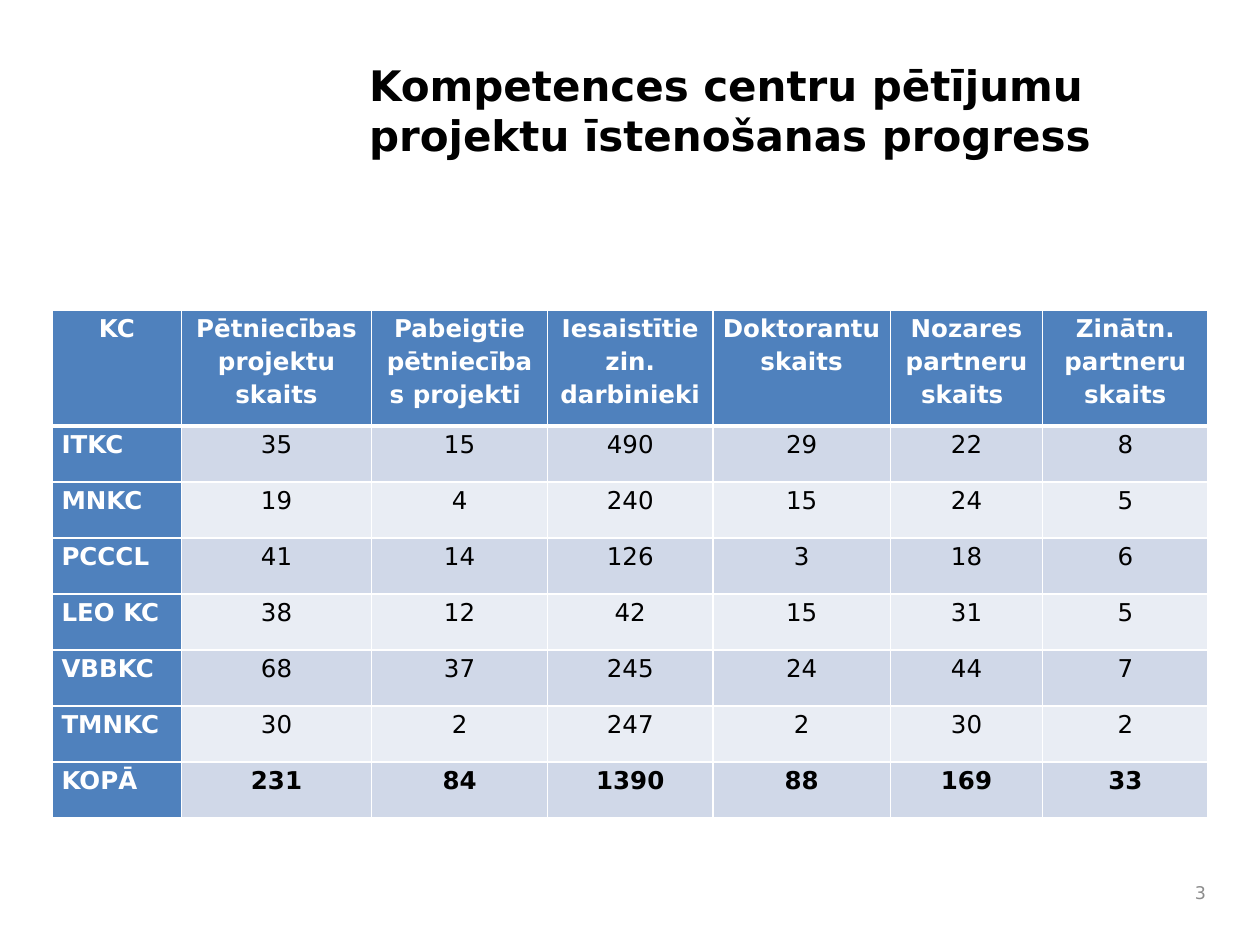
import dataclasses

import pptx
import pptx.dml.color
import pptx.enum.text
import pptx.oxml
import pptx.oxml.ns
import pptx.util
from pptx.util import Cm

Align = pptx.enum.text.PP_ALIGN
Anchor = pptx.enum.text.MSO_ANCHOR


@dataclasses.dataclass(frozen=True)
class Theme:
    font: str = "DejaVu Sans"
    ink: str = "000000"
    paper: str = "FFFFFF"
    muted: str = "8C8C8C"
    accent: str = "4F81BD"
    bands: tuple = ("D0D8E8", "E9EDF4")
    title_size: int = 24
    table_size: int = 14
    number_size: int = 10


THEME = Theme()

HEADINGS = (
    "KC", "Pētniecības projektu skaits", "Pabeigtie pētniecības projekti ",
    "Iesaistītie zin. darbinieki ", "Doktorantu skaits",
    "Nozares partneru skaits ", "Zinātn. partneru skaits",
)
CENTRES = (
    ("ITKC", 35, 15, 490, 29, 22, 8),
    ("MNKC", 19, 4, 240, 15, 24, 5),
    ("PCCCL", 41, 14, 126, 3, 18, 6),
    ("LEO KC", 38, 12, 42, 15, 31, 5),
    ("VBBKC", 68, 37, 245, 24, 44, 7),
    ("TMNKC", 30, 2, 247, 2, 30, 2),
    ("KOPĀ", 231, 84, 1390, 88, 169, 33),
)
COLUMN_WIDTHS = (2.61, 3.83, 3.55, 3.33, 3.58, 3.07, 3.33)
HEADER_HEIGHT, ROW_HEIGHT = 2.34, 1.13


def write(paragraph, text, size, color, bold=False, align=Align.LEFT):
    paragraph.alignment = align
    run = paragraph.add_run()
    run.text = text
    run.font.name = THEME.font
    run.font.size = pptx.util.Pt(size)
    run.font.bold = bold
    run.font.color.rgb = pptx.dml.color.RGBColor.from_string(color)


def add_text(slide, box, text, size, color, bold=False, align=Align.LEFT,
             anchor=Anchor.TOP):
    frame = slide.shapes.add_textbox(*map(Cm, box)).text_frame
    frame.word_wrap = True
    frame.vertical_anchor = anchor
    write(frame.paragraphs[0], text, size, color, bold, align)


def add_title(slide, box):
    add_text(slide, box, "Kompetences centru pētījumu projektu īstenošanas progress",
             THEME.title_size, THEME.ink, bold=True)


def add_page_number(slide, box):
    add_text(slide, box, "3", THEME.number_size, THEME.muted,
             align=Align.RIGHT, anchor=Anchor.MIDDLE)


def set_borders(cell, **widths):
    """Draw paper-coloured borders; widths are points keyed by lnL, lnR, lnT, lnB."""
    properties = cell._tc.get_or_add_tcPr()
    for position, (side, width) in enumerate(widths.items()):
        properties.insert(position, pptx.oxml.parse_xml(
            f'<a:{side} {pptx.oxml.ns.nsdecls("a")} w="{pptx.util.Pt(width)}">'
            f'<a:solidFill><a:srgbClr val="{THEME.paper}"/></a:solidFill></a:{side}>'))


def fill_cell(cell, text, row, column):
    heading, label, total = row == 0, column == 0, row == len(CENTRES)
    on_accent = heading or label
    fill = THEME.accent if on_accent else THEME.bands[(row - 1) % 2]
    cell.fill.solid()
    cell.fill.fore_color.rgb = pptx.dml.color.RGBColor.from_string(fill)
    cell.margin_left = cell.margin_right = Cm(0.19)
    cell.margin_top = cell.margin_bottom = 0
    paragraph = cell.text_frame.paragraphs[0]
    paragraph.line_spacing = 1.15
    write(paragraph, text, THEME.table_size,
          THEME.paper if on_accent else THEME.ink,
          bold=on_accent or total,
          align=Align.LEFT if label and not heading else Align.CENTER)
    set_borders(cell, lnL=1, lnR=1, lnT=3 if row == 1 else 1,
                lnB=3 if heading else 1)


def add_progress_table(slide, left, top):
    rows = (HEADINGS, *CENTRES)
    height = HEADER_HEIGHT + ROW_HEIGHT * len(CENTRES)
    table = slide.shapes.add_table(
        len(rows), len(HEADINGS), Cm(left), Cm(top),
        Cm(sum(COLUMN_WIDTHS)), Cm(height)).table
    table.first_col = True
    for column, width in zip(table.columns, COLUMN_WIDTHS):
        column.width = Cm(width)
    for r, values in enumerate(rows):
        table.rows[r].height = Cm(ROW_HEIGHT if r else HEADER_HEIGHT)
        for c, value in enumerate(values):
            fill_cell(table.cell(r, c), str(value), r, c)


def main():
    deck = pptx.Presentation()
    deck.slide_width, deck.slide_height = Cm(25.4), Cm(19.05)
    slide = deck.slides.add_slide(deck.slide_layouts[6])
    add_title(slide, (7.19, 1.07, 16.94, 2.87))
    add_page_number(slide, (23.16, 17.58, 1.4, 0.84))
    add_progress_table(slide, 1.05, 6.25)
    deck.save("out.pptx")


if __name__ == "__main__":
    main()
